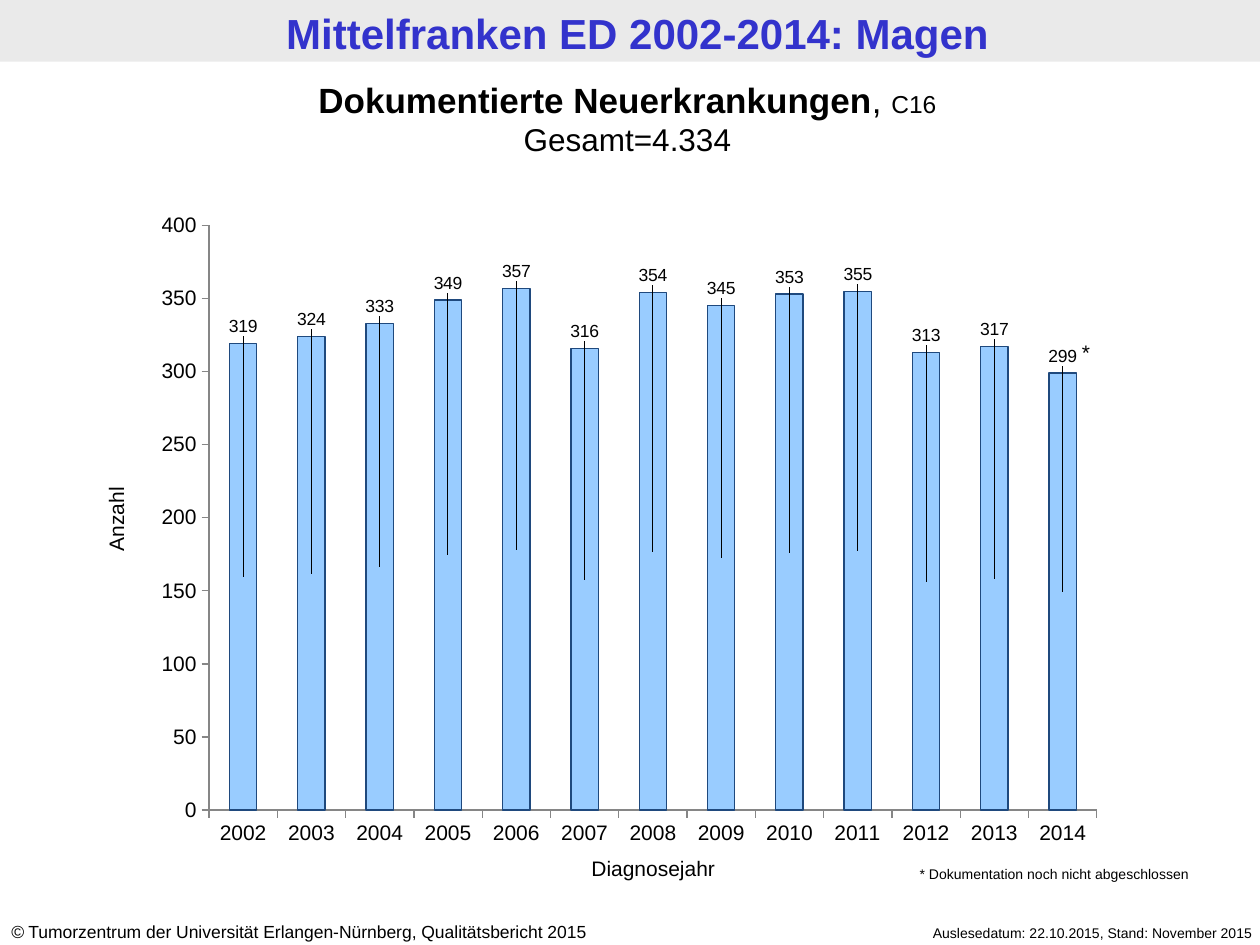
from lxml import etree
from pptx import Presentation
from pptx import util as u
from pptx.chart import data as chart_data
from pptx.dml.color import RGBColor
from pptx.enum import chart as ch, shapes, text
from pptx.oxml import ns

THEME = {
    "font": "Arial", "ink": "000000", "title": "3333CC", "band": "EAEAEA",
    "bar": "99CCFF", "bar_line": "1F497D", "axis": "868686",
    "title_size": 24, "heading_size": 20, "total_size": 18, "code_size": 14,
    "axis_size": 12, "label_size": 10, "note_size": 8,
}
WIDTH, HEIGHT = 10, 7.5

NEW_CASES = {
    "2002": 319, "2003": 324, "2004": 333, "2005": 349, "2006": 357,
    "2007": 316, "2008": 354, "2009": 345, "2010": 353, "2011": 355,
    "2012": 313, "2013": 317, "2014": 299,
}
AXIS_MAX, AXIS_STEP = 400, 50
LABEL_GAP = 0.026  # bar top to label centre, as a share of the chart height
PLOT = {"x": 0.066, "y": 0.029, "w": 0.914, "h": 0.903}

# Boxes are left, top, width, height in percent of the slide.
BAND = (0, 0, 100, 6.53)
CHART = (11.5, 21.87, 77.1, 68.53)
LEFT, CENTER, RIGHT = text.PP_ALIGN.LEFT, text.PP_ALIGN.CENTER, text.PP_ALIGN.RIGHT

# Each text: box, alignment, rotation, paragraphs of (words, size, format) runs.
TEXTS = [
    ((0.6, 0.13, 100, 6.53), CENTER, 0,
     [[("Mittelfranken ED 2002-2014: Magen", "title_size", {"bold": True, "color": "title"})]]),
    ((66.5, 97.2, 33.9, 3.2), RIGHT, 0,
     [[("Auslesedatum: 22.10.2015, Stand: November 2015", "note_size", {})]]),
    ((-0.1, 96.8, 52.4, 3.6), LEFT, 0,
     [[("©", "label_size", {"italic": True}),
       (" Tumorzentrum der Universität Erlangen-Nürnberg, Qualitätsbericht 2015",
        "label_size", {})]]),
    ((-0.4, 7.6, 100.4, 9.87), CENTER, 0,
     [[("Dokumentierte Neuerkrankungen", "heading_size", {"bold": True}),
       (", ", "heading_size", {}), ("C16", "code_size", {})],
      [("Gesamt=4.334", "total_size", {})]]),
    ((40.6, 89.87, 22.5, 4), CENTER, 0, [[("Diagnosejahr", "axis_size", {})]]),
    ((3.1, 52.93, 12.2, 4), CENTER, 270, [[("Anzahl", "axis_size", {})]]),
    ((83.6, 35.33, 3.9, 4), RIGHT, 0, [[("*", "axis_size", {})]]),
    ((72, 90.93, 27, 3.2), LEFT, 0,
     [[("* Dokumentation noch nicht abgeschlossen", "note_size", {})]]),
]


def place(box):
    """Turn percentages of the slide into lengths."""
    return [u.Inches(share * side / 100)
            for share, side in zip(box, (WIDTH, HEIGHT, WIDTH, HEIGHT))]


def color(name):
    return RGBColor.from_string(THEME[name])


def style_font(font, size, color_name="ink", **flags):
    font.name, font.size = THEME["font"], u.Pt(THEME[size])
    font.color.rgb = color(color_name)
    for flag, value in flags.items():
        setattr(font, flag, value)


def style_line(line, color_name):
    line.color.rgb, line.width = color(color_name), u.Pt(0.75)


def add_text(slide, box, alignment, rotation, paragraphs):
    words_box = slide.shapes.add_textbox(*place(box))
    words_box.rotation = rotation
    frame = words_box.text_frame
    frame.word_wrap = True
    frame.auto_size = text.MSO_AUTO_SIZE.SHAPE_TO_FIT_TEXT
    for number, runs in enumerate(paragraphs):
        paragraph = frame.add_paragraph() if number else frame.paragraphs[0]
        paragraph.alignment = alignment
        for words, size, look in runs:
            run = paragraph.add_run()
            run.text = words
            flags = {"bold": False, "italic": False, **look}
            style_font(run.font, size, flags.pop("color", "ink"), **flags)


def manual_layout(layout, values):
    """Fill a c:layout element with manual placement values."""
    manual = etree.SubElement(layout, ns.qn("c:manualLayout"))
    for tag, value in values.items():
        etree.SubElement(manual, ns.qn(f"c:{tag}")).set("val", str(value))


def add_case_chart(slide):
    cases = chart_data.CategoryChartData()
    cases.categories = list(NEW_CASES)
    cases.add_series("Series 1", NEW_CASES.values())
    chart = slide.shapes.add_chart(
        ch.XL_CHART_TYPE.COLUMN_STACKED, *place(CHART), cases).chart
    chart.has_legend = chart.has_title = False
    style_font(chart.font, "axis_size")

    years, counts = chart.category_axis, chart.value_axis
    for axis in (years, counts):
        axis.has_major_gridlines = False
        axis.major_tick_mark = ch.XL_TICK_MARK.OUTSIDE
        style_line(axis.format.line, "axis")
    for setting, value in {"minimum_scale": 0, "maximum_scale": AXIS_MAX,
                           "major_unit": AXIS_STEP}.items():
        setattr(counts, setting, value)

    plot = chart.plots[0]
    for setting, value in {"gap_width": 150, "overlap": 100,
                           "vary_by_categories": False}.items():
        setattr(plot, setting, value)
    bars = plot.series[0]
    bars.format.fill.solid()
    bars.format.fill.fore_color.rgb = color("bar")
    style_line(bars.format.line, "bar_line")

    bars.data_labels.show_value = True
    style_font(bars.data_labels.font, "label_size")
    for number in range(len(NEW_CASES)):
        style_font(bars.points[number].data_label.font, "label_size")
    # Lift each label from the middle of its bar to just above the top.
    for label, count in zip(bars._element.iter(ns.qn("c:dLbl")), NEW_CASES.values()):
        lift = count / AXIS_MAX * PLOT["h"] / 2 + LABEL_GAP
        layout = etree.Element(ns.qn("c:layout"))
        label.insert(1, layout)
        manual_layout(layout, {"x": 0, "y": round(-lift, 4)})

    plot_area = chart._chartSpace.find(f".//{ns.qn('c:plotArea')}")
    for old in plot_area.findall(ns.qn("c:layout")):
        plot_area.remove(old)
    layout = etree.Element(ns.qn("c:layout"))
    plot_area.insert(0, layout)
    manual_layout(layout, {"layoutTarget": "inner", "xMode": "edge",
                           "yMode": "edge", **PLOT})


def main():
    deck = Presentation()
    deck.slide_width, deck.slide_height = u.Inches(WIDTH), u.Inches(HEIGHT)
    slide = deck.slides.add_slide(deck.slide_layouts[6])
    band = slide.shapes.add_shape(shapes.MSO_SHAPE.RECTANGLE, *place(BAND))
    band.shadow.inherit = False
    band.fill.solid()
    band.fill.fore_color.rgb = color("band")
    band.line.fill.background()
    add_case_chart(slide)
    for entry in TEXTS:
        add_text(slide, *entry)
    deck.save("out.pptx")


if __name__ == "__main__":
    main()
